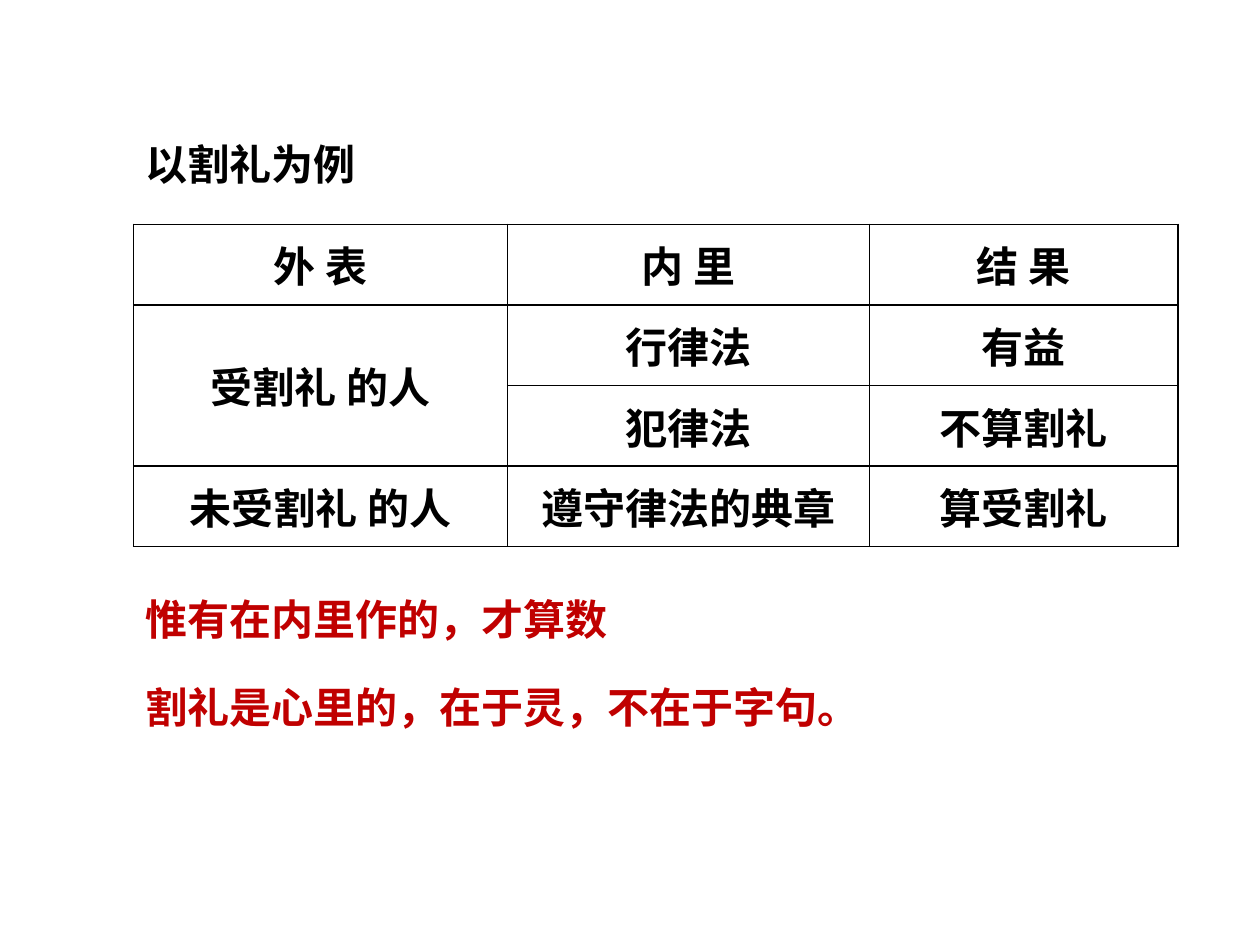
import pptx
import pptx.dml.color
import pptx.enum.text
import pptx.util
from lxml import etree
from pptx.oxml.ns import qn

COLORS = {"black": "000000", "red": "C00000"}
CHINESE_FONT = "Noto Sans CJK SC"
LATIN_FONT = "Calibri"
LEFT = 1.06
ROW_HEIGHT = 0.64
COLUMN_WIDTHS = [2.97, 2.87, 2.45]


def add_run(paragraph, text, color, font_name=LATIN_FONT):
    run = paragraph.add_run()
    run.text = text
    run.font.size = pptx.util.Pt(24)
    run.font.bold = True
    run.font.color.rgb = pptx.dml.color.RGBColor.from_string(COLORS[color])
    run.font.name = font_name
    properties = run.font._element
    etree.SubElement(properties, qn("a:ea"), typeface=CHINESE_FONT)


def add_borders(cell):
    properties = cell._tc.get_or_add_tcPr()
    for side in ("a:lnL", "a:lnR", "a:lnT", "a:lnB"):
        line = etree.SubElement(properties, qn(side), w=str(pptx.util.Pt(1)))
        fill = etree.SubElement(line, qn("a:solidFill"))
        etree.SubElement(fill, qn("a:srgbClr"), val=COLORS["black"])


presentation = pptx.Presentation()
presentation.slide_width = pptx.util.Inches(10)
presentation.slide_height = pptx.util.Inches(7.5)
slide = presentation.slides.add_slide(presentation.slide_layouts[6])

# Circumcision table: outward sign, inward deed, result
rows = [
    ["外 表", "内 里", "结 果"],
    ["受割礼 的人", "行律法", "有益"],
    ["", "犯律法", "不算割礼"],
    ["未受割礼 的人", "遵守律法的典章", "算受割礼"],
]
table = slide.shapes.add_table(
    len(rows), len(COLUMN_WIDTHS),
    pptx.util.Inches(LEFT), pptx.util.Inches(1.78),
    pptx.util.Inches(sum(COLUMN_WIDTHS)), pptx.util.Inches(ROW_HEIGHT * len(rows)),
).table
table.first_row = False
table.horz_banding = False
for column, width in zip(table.columns, COLUMN_WIDTHS):
    column.width = pptx.util.Inches(width)
table.cell(1, 0).merge(table.cell(2, 0))

for row_index, row in enumerate(rows):
    for column_index, text in enumerate(row):
        cell = table.cell(row_index, column_index)
        add_borders(cell)
        cell.fill.background()
        cell.vertical_anchor = pptx.enum.text.MSO_ANCHOR.MIDDLE
        if text:
            paragraph = cell.text_frame.paragraphs[0]
            paragraph.alignment = pptx.enum.text.PP_ALIGN.CENTER
            add_run(paragraph, text, "black", LATIN_FONT if row_index else CHINESE_FONT)

# Heading above the table and conclusions below it
statements = [
    ("惟有在内里作的，才算数", 4.66, 3.88, "red"),
    ("割礼是心里的，在于灵，不在于字句。", 5.36, 5.89, "red"),
    ("以割礼为例", 1.05, 1.87, "black"),
]
for text, top, width, color in statements:
    box = slide.shapes.add_textbox(
        pptx.util.Inches(LEFT), pptx.util.Inches(top),
        pptx.util.Inches(width), pptx.util.Inches(0.5),
    )
    box.text_frame.word_wrap = False
    box.text_frame.auto_size = pptx.enum.text.MSO_AUTO_SIZE.SHAPE_TO_FIT_TEXT
    add_run(box.text_frame.paragraphs[0], text, color)

presentation.save("out.pptx")
